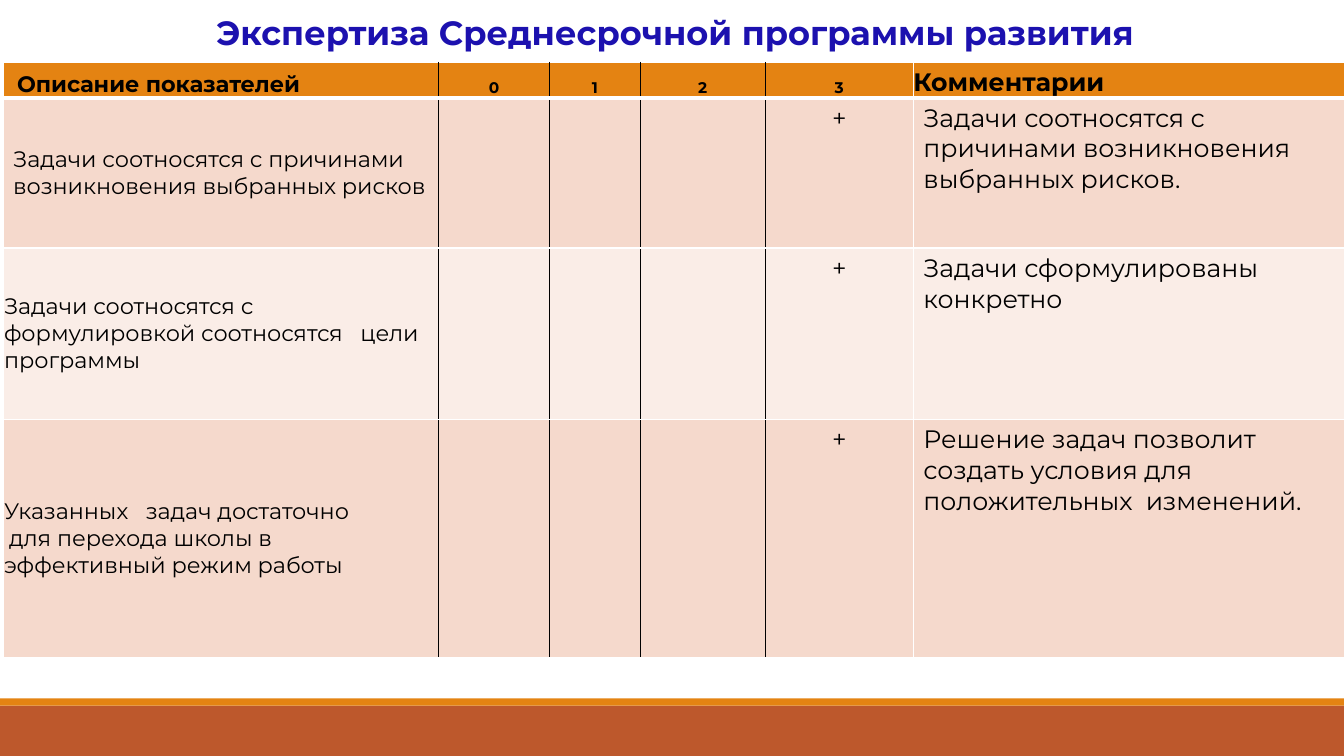
from pptx import Presentation
from pptx.dml.color import RGBColor
from pptx.enum.shapes import MSO_SHAPE as Shape
from pptx.enum.text import MSO_ANCHOR as Anchor, MSO_AUTO_SIZE as AutoSize, PP_ALIGN as Align
from pptx.oxml.ns import qn
from pptx.util import Inches, Pt
from lxml import etree

FONT = "Montserrat"
BLACK, WHITE = "000000", "FFFFFF"
ORANGE, RUST, TITLE_BLUE = "E48312", "BD582C", "1C11AF"
BAND_FILLS = ["F5D9CC", "FAEDE7"]
COLUMN_WIDTHS = [4.32, 1.1, 0.9, 1.24, 1.47, 4.32]
ROW_HEIGHTS = [0.35, 1.49, 1.7, 2.36]
LAST_SCORE, COMMENT = 4, 5

HEADERS = ["Описание показателей", "0", "1", "2", "3", "Комментарии"]
CRITERIA = [
    (["Задачи соотносятся с причинами возникновения выбранных рисков"],
     "Задачи соотносятся с причинами возникновения выбранных рисков."),
    (["Задачи соотносятся с формулировкой соотносятся   цели программы"],
     "Задачи сформулированы конкретно"),
    (["Указанных   задач достаточно", "для перехода школы в эффективный режим работы"],
     "Решение задач позволит создать условия для положительных  изменений."),
]


def color(value):
    return RGBColor.from_string(value)


def write(frame, *lines, size=18, bold=False, fill=BLACK, align=Align.LEFT,
          left=0, first_lines=()):
    for index, line in enumerate(lines):
        paragraph = frame.paragraphs[0] if index == 0 else frame.add_paragraph()
        paragraph.alignment = align
        properties = paragraph._p.get_or_add_pPr()
        properties.set("marL", str(Inches(left)))
        first_line = first_lines[index] if index < len(first_lines) else 0
        properties.set("indent", str(Inches(first_line)))
        run = paragraph.add_run()
        run.text = line
        run.font.name = FONT
        run.font.size = Pt(size)
        run.font.bold = bold
        run.font.color.rgb = color(fill)


def add_band(slide, top, height, fill):
    band = slide.shapes.add_shape(Shape.RECTANGLE, 0, Inches(top), Inches(13.33), Inches(height))
    band.shadow.inherit = False
    band.fill.solid()
    band.fill.fore_color.rgb = color(fill)
    band.line.fill.background()


def add_title(slide, text):
    box = slide.shapes.add_textbox(Inches(0.06), Inches(0.07), Inches(13.27), Inches(0.5))
    box.text_frame.word_wrap = True
    box.text_frame.auto_size = AutoSize.SHAPE_TO_FIT_TEXT
    write(box.text_frame, text, size=24, bold=True, fill=TITLE_BLUE, align=Align.CENTER)


def add_border(cell, side, line_color, width):
    line = etree.SubElement(cell._tc.get_or_add_tcPr(), qn(f"a:ln{side}"), w=str(Pt(width)))
    solid = etree.SubElement(line, qn("a:solidFill"))
    etree.SubElement(solid, qn("a:srgbClr"), val=line_color)


def style_cell(cell, row, column):
    add_border(cell, "L", WHITE if column in (0, COMMENT) else BLACK, 1)
    add_border(cell, "R", WHITE if column >= LAST_SCORE else BLACK, 1)
    add_border(cell, "T", WHITE, 1)
    add_border(cell, "B", WHITE, 3 if row == 0 else 1)
    cell.fill.solid()
    cell.fill.fore_color.rgb = color(BAND_FILLS[(row - 1) % 2] if row else ORANGE)


def clear_margins(cell):
    cell.margin_left = cell.margin_right = cell.margin_top = cell.margin_bottom = 0


def fill_header(table):
    for column, text in enumerate(HEADERS):
        cell = table.cell(0, column)
        clear_margins(cell)
        cell.vertical_anchor = Anchor.BOTTOM
        if column == 0:
            write(cell.text_frame, text, size=16, bold=True, left=0.08, first_lines=[0.06])
        elif column == COMMENT:
            write(cell.text_frame, text, bold=True)
        else:
            write(cell.text_frame, text, size=11, bold=True, align=Align.CENTER)


def fill_criterion(table, row, lines, comment):
    cell = table.cell(row, 0)
    cell.vertical_anchor = Anchor.MIDDLE
    if row > 1:
        clear_margins(cell)
    write(cell.text_frame, *lines, size=16, left=0.01 if row > 1 else 0, first_lines=[0, 0.05])
    write(table.cell(row, LAST_SCORE).text_frame, "+", align=Align.CENTER)
    write(table.cell(row, COMMENT).text_frame, comment)


def add_review_table(slide):
    table = slide.shapes.add_table(
        len(ROW_HEIGHTS), len(COLUMN_WIDTHS), Inches(0.03), Inches(0.62),
        Inches(sum(COLUMN_WIDTHS)), Inches(sum(ROW_HEIGHTS))).table
    for column, width in zip(table.columns, COLUMN_WIDTHS):
        column.width = Inches(width)
    for row, height in enumerate(ROW_HEIGHTS):
        table.rows[row].height = Inches(height)
        for column in range(len(COLUMN_WIDTHS)):
            style_cell(table.cell(row, column), row, column)
    fill_header(table)
    for row, (lines, comment) in enumerate(CRITERIA, start=1):
        fill_criterion(table, row, lines, comment)


def main():
    presentation = Presentation()
    presentation.slide_width = Inches(13.33)
    presentation.slide_height = Inches(7.5)
    slide = presentation.slides.add_slide(presentation.slide_layouts[6])
    add_band(slide, 7, 0.5, RUST)
    add_band(slide, 6.93, 0.07, ORANGE)
    add_title(slide, "Экспертиза Среднесрочной программы развития")
    add_review_table(slide)
    presentation.save("out.pptx")


if __name__ == "__main__":
    main()
